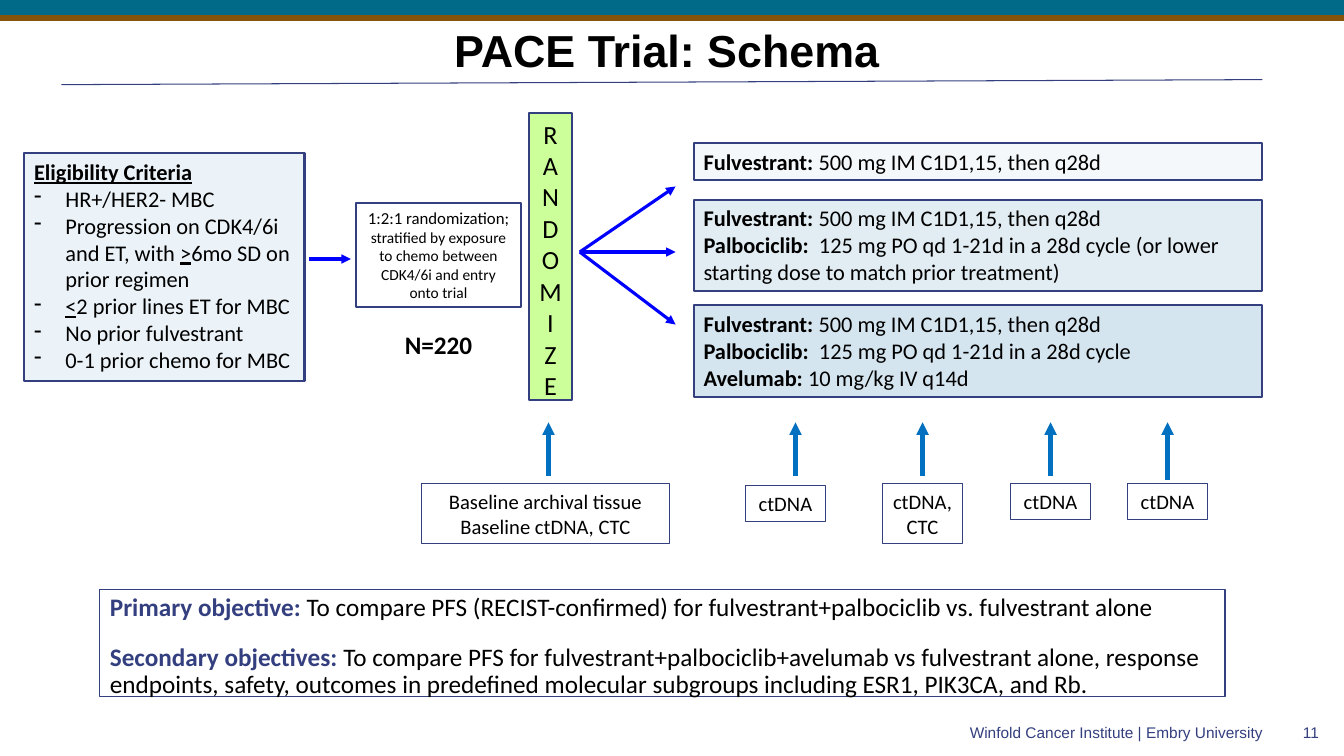
import pptx
import pptx.dml.color
import pptx.enum.shapes
import pptx.enum.text
import pptx.oxml
import pptx.oxml.ns
import pptx.util
from pptx.util import Inches

RGBColor = pptx.dml.color.RGBColor
ALIGN = pptx.enum.text.PP_ALIGN
ANCHOR = pptx.enum.text.MSO_ANCHOR

NAVY = RGBColor(0x33, 0x3F, 0x7F)
BLACK = RGBColor(0, 0, 0)
TEAL = RGBColor(0x00, 0x6A, 0x88)
BROWN = RGBColor(0x85, 0x53, 0x09)
BLUE = RGBColor(0, 0, 0xFF)
SAMPLE_BLUE = RGBColor(0x00, 0x70, 0xC0)
GREEN = RGBColor(0xCC, 0xFF, 0x99)
PALE = RGBColor(0xEC, 0xF3, 0xF8)
LIGHT = RGBColor(0xD9, 0xE7, 0xF0)
MEDIUM = RGBColor(0xC6, 0xDB, 0xE9)

BOLD = {"bold": True}
UNDERLINE = {"underline": True}
LABEL = {"bold": True, "color": NAVY}


def add_xml(parent, tag, **attributes):
    child = parent.makeelement(pptx.oxml.ns.qn(tag), attributes)
    parent.append(child)
    return child


def write_text(shape, paragraphs, size=16, font="Calibri", color=BLACK, bold=False,
               align=ALIGN.LEFT, anchor=ANCHOR.TOP, line_spacing=None,
               space_after=0, wrap=True):
    """Each paragraph is a list of runs; a run is (text, overrides)."""
    frame = shape.text_frame
    frame.word_wrap = wrap
    frame.auto_size = pptx.enum.text.MSO_AUTO_SIZE.NONE
    frame.vertical_anchor = anchor
    frame.margin_left = frame.margin_right = Inches(0.1)
    frame.margin_top = frame.margin_bottom = Inches(0.05)
    for index, runs in enumerate(paragraphs):
        paragraph = frame.paragraphs[0] if index == 0 else frame.add_paragraph()
        paragraph.alignment = align
        paragraph.line_spacing = line_spacing
        paragraph.space_before = pptx.util.Pt(0)
        paragraph.space_after = pptx.util.Pt(space_after)
        for text, overrides in runs:
            run = paragraph.add_run()
            run.text = text
            run.font.name = font
            run.font.size = pptx.util.Pt(overrides.get("size", size))
            run.font.bold = overrides.get("bold", bold)
            run.font.underline = overrides.get("underline", False)
            run.font.color.rgb = overrides.get("color", color)


def set_bullet(paragraph, character=None, indent=0):
    properties = paragraph._p.get_or_add_pPr()
    properties.set("marL", str(Inches(indent)))
    properties.set("indent", str(-Inches(indent)))
    if character:
        add_xml(properties, "a:buChar", char=character)
    else:
        add_xml(properties, "a:buNone")


def place(shape, left, top, width, height):
    shape.left, shape.top = Inches(left), Inches(top)
    shape.width, shape.height = Inches(width), Inches(height)


def add_box(slide, box, paragraphs, fill=None, opacity=100, line_width=1.5, **text_format):
    shape = slide.shapes.add_shape(pptx.enum.shapes.MSO_SHAPE.RECTANGLE, *map(Inches, box))
    shape.shadow.inherit = False
    shape.line.color.rgb = NAVY
    shape.line.width = pptx.util.Pt(line_width)
    if fill is None:
        shape.fill.background()
    else:
        shape.fill.solid()
        shape.fill.fore_color.rgb = fill
        if opacity < 100:
            color = shape._element.spPr.find(".//" + pptx.oxml.ns.qn("a:srgbClr"))
            add_xml(color, "a:alpha", val=str(opacity * 1000))
    write_text(shape, paragraphs, **text_format)
    return shape


def add_label(slide, box, text, **text_format):
    label = slide.shapes.add_textbox(*map(Inches, box))
    write_text(label, [[(text, {})]], **text_format)
    return label


def add_line(slide, start, end, color, width, arrow=False):
    line = slide.shapes.add_connector(
        pptx.enum.shapes.MSO_CONNECTOR.STRAIGHT, *map(Inches, (*start, *end)))
    line.line.color.rgb = color
    line.line.width = pptx.util.Pt(width)
    if arrow:
        add_xml(line.line._get_or_add_ln(), "a:tailEnd", type="triangle")
    add_xml(line._element.spPr, "a:effectLst")


def add_header(slide, left, top, width, height):
    # Coloured bands, title and the rule below it
    add_line(slide, (0, 0.07), (13.33, 0.07), TEAL, 12.75)
    add_line(slide, (0, 0.18), (13.33, 0.18), BROWN, 4)
    title = slide.shapes.title
    place(title, left, top, width, height)
    write_text(title, [[("PACE Trial: Schema", {})]], size=32, font="Arial", bold=True,
               align=ALIGN.CENTER, anchor=ANCHOR.MIDDLE, line_spacing=0.9)
    add_line(slide, (left + 0.51, top + 0.67), (left + 12.42, top + 0.62), NAVY, 0.75)


def add_eligibility(slide, left, top, width, height):
    criteria = [
        [("HR+/HER2- MBC", {})],
        [("Progression on CDK4/6i and ET, with ", {}), (">", UNDERLINE),
         ("6mo SD on prior regimen", {})],
        [("<", UNDERLINE), ("2 prior lines ET for MBC", {})],
        [("No prior fulvestrant", {})],
        [("0-1 prior chemo for MBC", {})],
    ]
    heading = [("Eligibility Criteria", {**BOLD, **UNDERLINE})]
    box = add_box(slide, (left, top, width, height), [heading] + criteria, PALE)
    for paragraph in box.text_frame.paragraphs[1:]:
        set_bullet(paragraph, "-", 0.31)
    arrow_y = top + 1.05
    add_line(slide, (left + width + 0.04, arrow_y), (left + width + 0.46, arrow_y),
             BLUE, 2.25, arrow=True)


def add_randomization(slide, left, top, width, height):
    # Stratification note, sample size and the vertical RANDOMIZE bar
    note = [[("1:2:1 randomization; ", {"size": 12}),
             ("stratified by exposure to chemo between CDK4/6i and entry onto trial", {})]]
    add_box(slide, (left, top + 0.89, 1.64, 1.04), note, size=11, align=ALIGN.CENTER)
    add_label(slide, (left, top + 2.1, 1.64, 0.4), "N=220", size=18, bold=True,
              align=ALIGN.CENTER)
    letters = [[(part, {})] for part in ("RANDOMI", "Z", "E")]
    add_box(slide, (left + width - 0.42, top, 0.42, height), letters, GREEN,
            size=18.7, align=ALIGN.CENTER)


def add_arms(slide, left, top, width):
    fulvestrant = [("Fulvestrant: ", BOLD), ("500 mg IM C1D1,15, then q28d", {})]
    cycle = "125 mg PO qd 1-21d in a 28d cycle"
    lower_dose = " (or lower starting dose to match prior treatment)"
    palbociclib = ("Palbociclib:  ", BOLD)
    arms = [
        (0, 0.37, PALE, 50, [fulvestrant]),
        (0.56, 0.91, LIGHT, 75, [fulvestrant, [palbociclib, (cycle + lower_dose, {})]]),
        (1.61, 0.91, MEDIUM, 72, [fulvestrant, [palbociclib, (cycle, {})],
                                  [("Avelumab: ", BOLD), ("10 mg/kg IV q14d", {})]]),
    ]
    for offset, height, fill, opacity, paragraphs in arms:
        add_box(slide, (left, top + offset, width, height), paragraphs, fill, opacity)
    for end_y in (1.85, 2.5, 3.22):
        add_line(slide, (left - 1.13, 2.5), (left - 0.18, end_y), BLUE, 2.25, arrow=True)


def add_samples(slide, top):
    # Sample boxes: left, top offset, width, height, arrow x, arrow start, lines
    samples = [
        (4.18, 0, 2.46, 0.59, 5.44, 4.72, ["Baseline archival tissue", "Baseline ctDNA, CTC"]),
        (7.39, 0.02, 0.8, 0.35, 7.89, 4.72, ["ctDNA"]),
        (8.75, 0, 0.8, 0.59, 9.15, 4.72, ["ctDNA, CTC"]),
        (10.02, 0, 0.8, 0.35, 10.42, 4.72, ["ctDNA"]),
        (11.18, 0, 0.8, 0.35, 11.58, 4.76, ["ctDNA"]),
    ]
    for left, offset, width, height, arrow_x, arrow_y, lines in samples:
        add_box(slide, (left, top + offset, width, height), [[(line, {})] for line in lines],
                line_width=0.75, size=14.7, align=ALIGN.CENTER)
        add_line(slide, (arrow_x, arrow_y), (arrow_x, top - 0.61), SAMPLE_BLUE, 3, arrow=True)


def add_objectives(slide, left, top, width, height):
    body = slide.placeholders[1]
    place(body, left, top, width, height)
    body.line.color.rgb = NAVY
    body.line.width = pptx.util.Pt(0.75)
    write_text(body, [
        [("Primary objective: ", LABEL),
         ("To compare PFS (RECIST-confirmed) for fulvestrant+palbociclib vs. "
          "fulvestrant alone", {})],
        [("Secondary objectives: ", LABEL),
         ("To compare PFS for fulvestrant+palbociclib+avelumab vs fulvestrant alone, "
          "response endpoints, safety, outcomes in predefined molecular subgroups "
          "including ESR1, PIK3CA, and Rb.", {})],
    ], size=18, line_spacing=0.9, space_after=16)
    for paragraph in body.text_frame.paragraphs:
        set_bullet(paragraph)


def add_footer(slide, left, top, width, height):
    style = {"size": 11, "font": "Arial", "color": NAVY}
    add_label(slide, (left, top, width, height), "Winfold Cancer Institute | Embry University",
              wrap=False, **style)
    add_label(slide, (left + width, top, 0.5, height), "11", align=ALIGN.RIGHT, **style)


def main():
    presentation = pptx.Presentation()
    presentation.slide_width = Inches(13.33)
    presentation.slide_height = Inches(7.5)
    slide = presentation.slides.add_slide(presentation.slide_layouts[1])
    add_header(slide, 0.1, 0.17, 13.03, 0.71)
    add_eligibility(slide, 0.24, 1.52, 2.78, 2.26)
    add_randomization(slide, 3.53, 1.12, 2.14, 2.85)
    add_arms(slide, 6.88, 1.42, 5.64)
    add_samples(slide, 4.8)
    add_objectives(slide, 0.99, 5.85, 11.16, 1.06)
    add_footer(slide, 9.52, 7.12, 3.16, 0.29)
    presentation.save("out.pptx")


if __name__ == "__main__":
    main()
